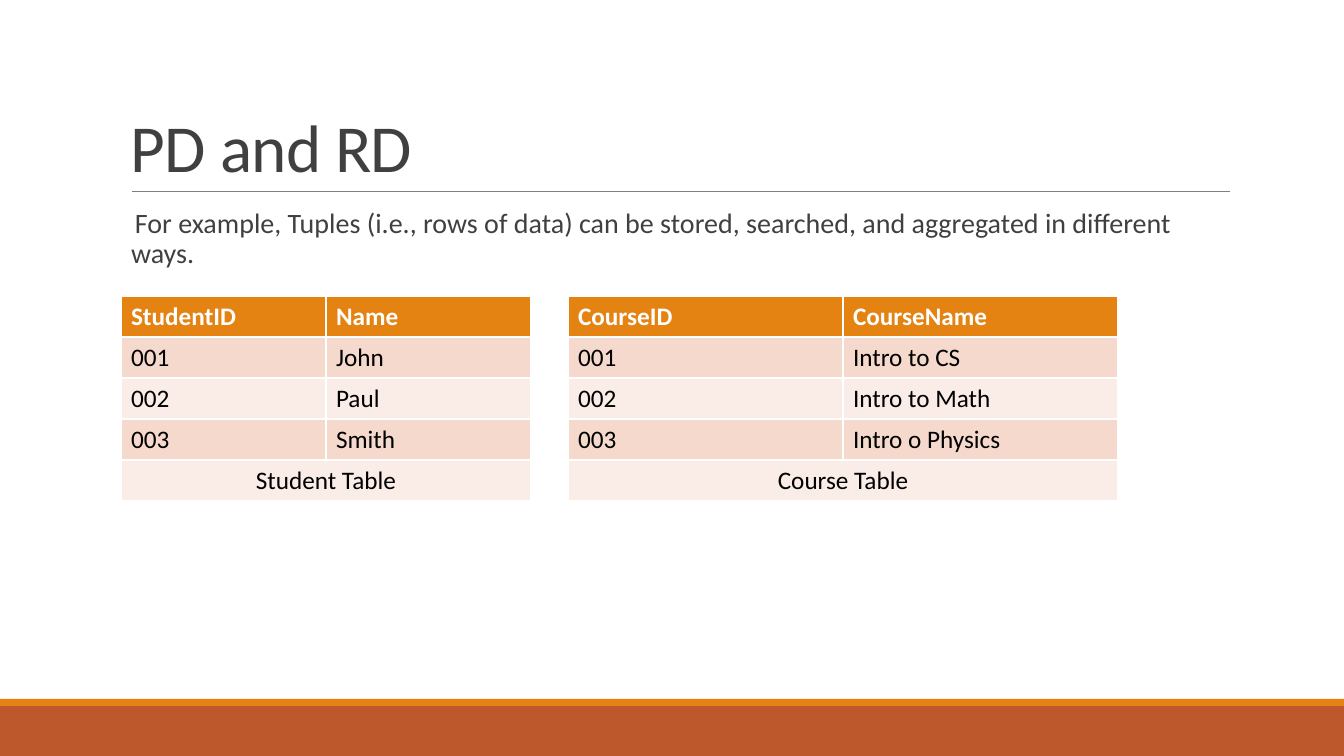
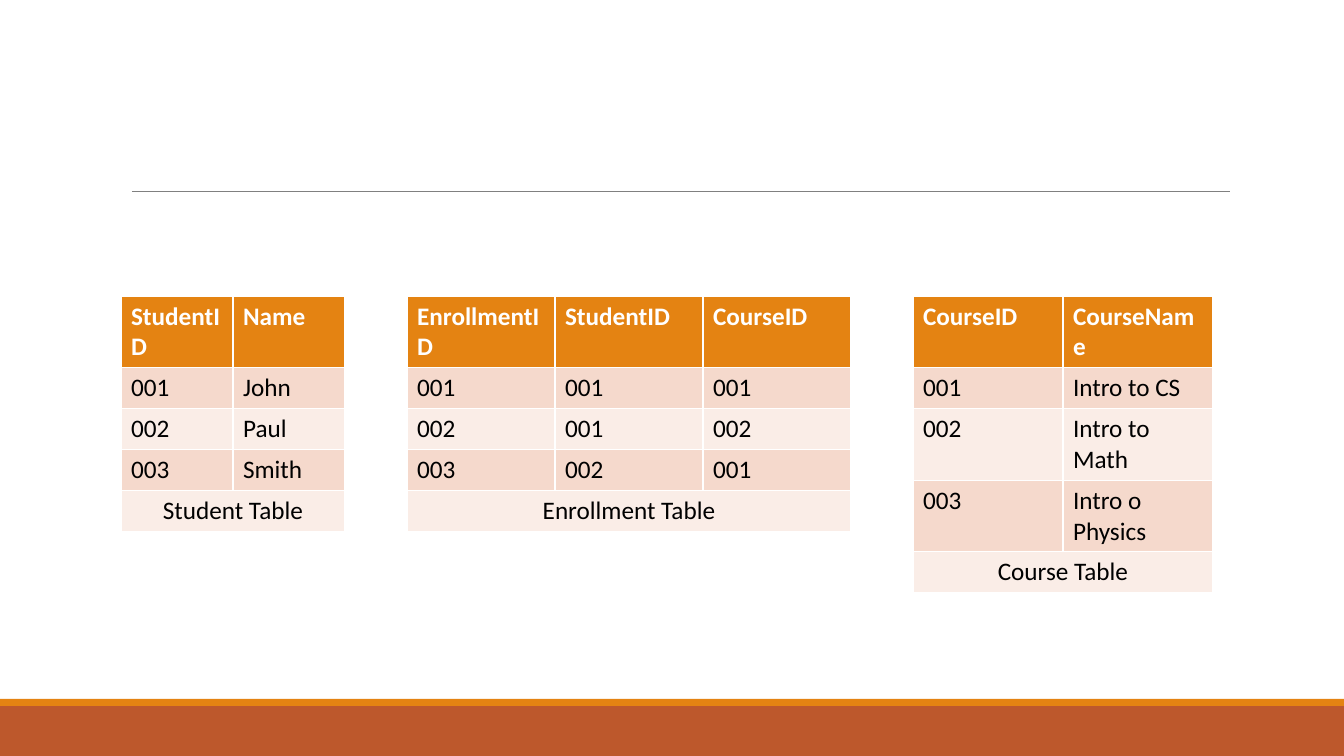
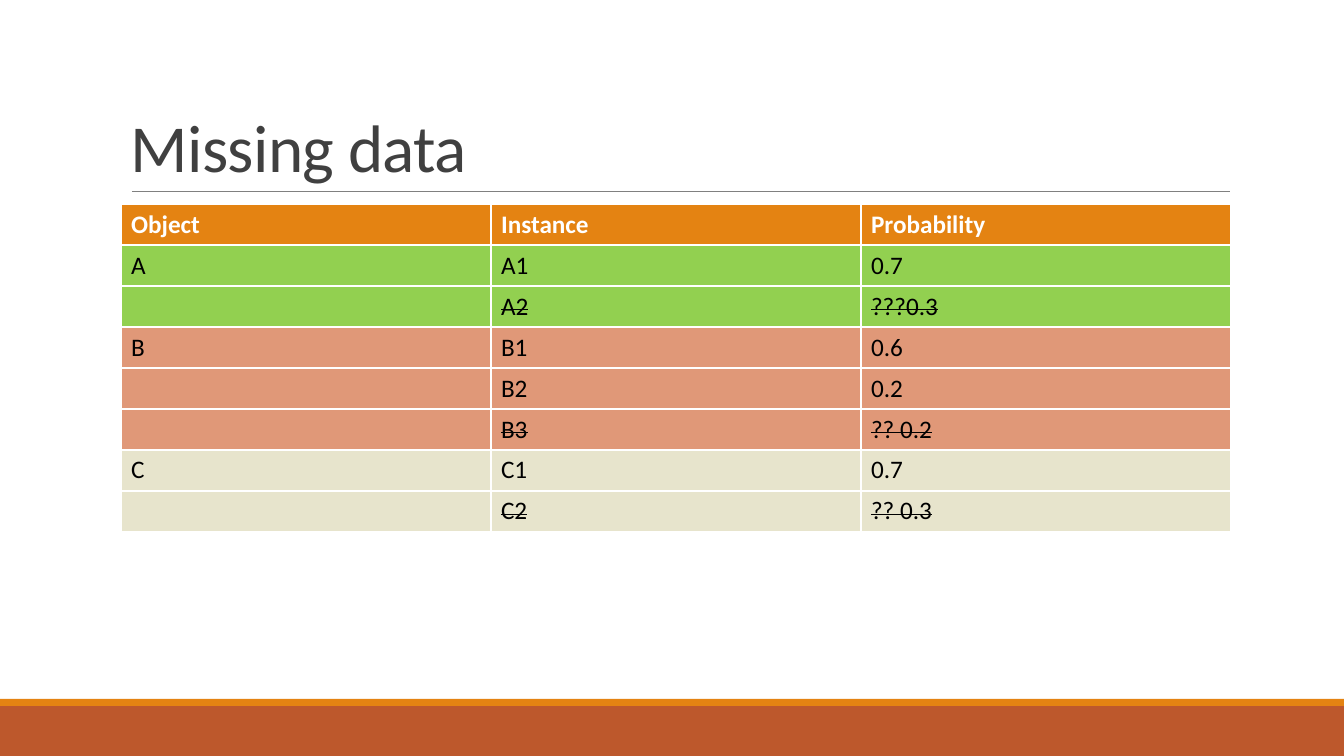
"""Build three slides on relational tables and missing data."""
from lxml import etree
from pptx import Presentation
from pptx.dml.color import RGBColor
from pptx.enum.shapes import MSO_CONNECTOR, MSO_SHAPE
from pptx.enum.text import MSO_ANCHOR, PP_ALIGN
from pptx.oxml.ns import qn
from pptx.util import Emu, Pt

RECTANGLE = MSO_SHAPE.RECTANGLE
STRAIGHT = MSO_CONNECTOR.STRAIGHT
BOTTOM = MSO_ANCHOR.BOTTOM
LEFT, CENTER = PP_ALIGN.LEFT, PP_ALIGN.CENTER

EMU_PER_PX = 12192000 / 1344
FONT = "Calibri"
WHITE = RGBColor(0xFF, 0xFF, 0xFF)
BLACK = RGBColor(0x00, 0x00, 0x00)
CHARCOAL = RGBColor(0x40, 0x40, 0x40)
GRAY = RGBColor(0x80, 0x80, 0x80)
ORANGE = RGBColor(0xE4, 0x83, 0x12)
RUST = RGBColor(0xBD, 0x58, 0x2C)
PEACH = RGBColor(0xF5, 0xD9, 0xCC)
BLUSH = RGBColor(0xFA, 0xED, 0xE7)
GREEN = RGBColor(0x92, 0xD0, 0x50)
SALMON = RGBColor(0xE0, 0x98, 0x78)
BEIGE = RGBColor(0xE7, 0xE4, 0xCC)

TITLE_FONT = {"name": FONT, "size": Pt(48)}
BODY_FONT = {"name": FONT, "size": Pt(20)}
HEADER_FONT = {"name": FONT, "size": Pt(18), "bold": True}
CELL_FONT = {"name": FONT, "size": Pt(18), "bold": False}
BODY_SPACING = {"line_spacing": 0.9, "space_before": Pt(12), "space_after": Pt(2)}

MARGIN, CONTENT_WIDTH = 121, 1109
TABLES_TOP, CONTENT_TOP = 296, 204
ROW_HEIGHT = 41
BANDS = [(706, 50, RUST), (699, 7, ORANGE)]

BANDED_FILLS = [PEACH, BLUSH, PEACH, BLUSH]
OBJECT_FILLS = [GREEN] * 2 + [SALMON] * 3 + [BEIGE] * 2
STUDENTS = [
    ["StudentID", "Name"],
    ["001", "John"],
    ["002", "Paul"],
    ["003", "Smith"],
    ["Student Table"],
]
COURSES = [
    ["CourseID", "CourseName"],
    ["001", "Intro to CS"],
    ["002", "Intro to Math"],
    ["003", "Intro o Physics"],
    ["Course Table"],
]
ENROLLMENTS = [
    ["EnrollmentID", "StudentID", "CourseID"],
    ["001", "001", "001"],
    ["002", "001", "002"],
    ["003", "002", "001"],
    ["Enrollment Table"],
]
PROBABILITIES = [
    ["Object", "Instance", "Probability"],
    ["A", "A1", "0.7"],
    ["", "A2", "???0.3"],
    ["B", "B1", "0.6"],
    ["", "B2", "0.2"],
    ["", "B3", "?? 0.2"],
    ["C", "C1", "0.7"],
    ["", "C2", "?? 0.3"],
]
SLIDES = [
    {
        "title": "PD and RD",
        "body": "For example, Tuples (i.e., rows of data) can be stored, searched, "
                "and aggregated in different ways.",
        "tables": [
            (MARGIN, TABLES_TOP, 205, STUDENTS, BANDED_FILLS),
            (568, TABLES_TOP, 275, COURSES, BANDED_FILLS),
        ],
    },
    {
        "tables": [
            (407, TABLES_TOP, 148, ENROLLMENTS, BANDED_FILLS),
            (MARGIN, TABLES_TOP, 112, STUDENTS, BANDED_FILLS),
            (913, TABLES_TOP, 150, COURSES, BANDED_FILLS),
        ],
    },
    {
        "title": "Missing data",
        "tables": [(MARGIN, CONTENT_TOP, 370, PROBABILITIES, OBJECT_FILLS)],
    },
]


def px(*lengths):
    """Turn pixel lengths into EMU."""
    return [Emu(round(length * EMU_PER_PX)) for length in lengths]


def write(paragraph, text, formats, color):
    """Add one formatted run to a paragraph and return its properties element."""
    run = paragraph.add_run()
    run.text = text
    for name, value in formats.items():
        setattr(run.font, name, value)
    run.font.color.rgb = color
    return run._r.get_or_add_rPr()


presentation = Presentation()
presentation.slide_width, presentation.slide_height = px(1344, 756)
blank_layout = presentation.slide_layouts[6]

for content in SLIDES:
    slide = presentation.slides.add_slide(blank_layout)

    for top, height, color in BANDS:
        band = slide.shapes.add_shape(RECTANGLE, *px(0, top, 1344, height))
        band.shadow.inherit = False
        band.fill.solid()
        band.fill.fore_color.rgb = color
        band.line.fill.background()

    title_rule = slide.shapes.add_connector(STRAIGHT, *px(132, 191, 1230, 191))
    title_rule.line.color.rgb = GRAY
    title_rule.line.width = Pt(0.5)
    etree.SubElement(title_rule._element.spPr, qn("a:effectLst"))

    if "title" in content:
        title_box = slide.shapes.add_textbox(*px(MARGIN, 31, CONTENT_WIDTH, 160))
        title_frame = title_box.text_frame
        title_frame.word_wrap = True
        title_frame.vertical_anchor = BOTTOM
        paragraph = title_frame.paragraphs[0]
        paragraph.line_spacing = 0.85
        write(paragraph, content["title"], TITLE_FONT, CHARCOAL).set("spc", "-50")

    if "body" in content:
        body_box = slide.shapes.add_textbox(*px(MARGIN, CONTENT_TOP, CONTENT_WIDTH, 444))
        body_frame = body_box.text_frame
        body_frame.word_wrap = True
        body_frame.margin_left = body_frame.margin_right = 0
        paragraph = body_frame.paragraphs[0]
        for name, value in BODY_SPACING.items():
            setattr(paragraph, name, value)
        properties = paragraph._p.get_or_add_pPr()
        properties.set("marL", "91440")
        properties.set("indent", "-91440")
        etree.SubElement(properties, qn("a:buChar"), char=" ")
        write(paragraph, content["body"], BODY_FONT, CHARCOAL)

    for left, top, column_width, rows, fills in content["tables"]:
        column_count = len(rows[0])
        bounds = px(left, top, column_width * column_count, ROW_HEIGHT * len(rows))
        table = slide.shapes.add_table(len(rows), column_count, *bounds).table
        for row_index, (texts, fill) in enumerate(zip(rows, [ORANGE] + fills)):
            is_header = row_index == 0
            is_caption = len(texts) == 1
            is_missing = texts[-1].startswith("?")
            for cell in table.rows[row_index].cells:
                cell.fill.solid()
                cell.fill.fore_color.rgb = fill
            if is_caption:
                table.cell(row_index, 0).merge(table.cell(row_index, column_count - 1))
            for column_index, text in enumerate(texts):
                if not text:
                    continue
                paragraph = table.cell(row_index, column_index).text_frame.paragraphs[0]
                paragraph.alignment = CENTER if is_caption else LEFT
                formats = HEADER_FONT if is_header else CELL_FONT
                run_properties = write(paragraph, text, formats, WHITE if is_header else BLACK)
                if is_missing:
                    run_properties.set("strike", "sngStrike")

presentation.save("out.pptx")
